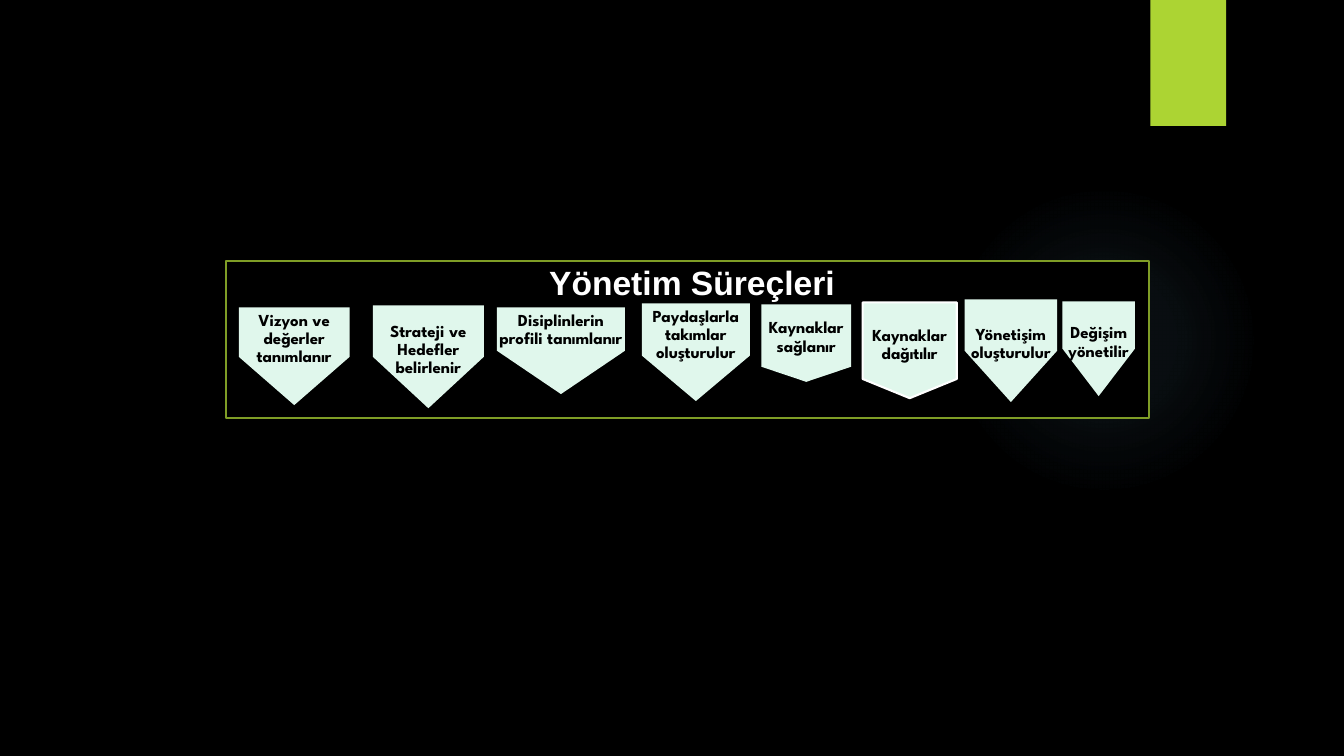
from lxml import etree
from pptx import Presentation
from pptx.dml.color import RGBColor
from pptx.enum.shapes import MSO_SHAPE
from pptx.enum.text import MSO_ANCHOR, PP_ALIGN
from pptx.oxml.ns import qn
from pptx.util import Pt

RECT, OVAL = MSO_SHAPE.RECTANGLE, MSO_SHAPE.OVAL
TOP, MID = MSO_ANCHOR.TOP, MSO_ANCHOR.MIDDLE
CENTER = PP_ALIGN.CENTER
BLACK = RGBColor(0x00, 0x00, 0x00)
WHITE = RGBColor(0xFF, 0xFF, 0xFF)
LIME = RGBColor(0xAC, 0xD4, 0x33)
OLIVE = RGBColor(0x7F, 0x9D, 0x26)
MINT = RGBColor(0xE0, 0xF7, 0xEC)
SKY = RGBColor(0x7A, 0xC4, 0xF0)

TITLE = "Yönetim Süreçleri"
# text, left, top, width, side, height, anchor, inset above, inset below, edge
STEPS = [
    ("Vizyon ve değerler tanımlanır", 170.6, 219.6, 79.2, 35.3, 69.8, TOP, 3, 25, None),
    ("Strateji ve Hedefler belirlenir", 266.4, 218.2, 79.2, 36.7, 73.4, MID, 15, 25, None),
    ("Disiplinlerin profili tanımlanır", 355, 219.6, 91.4, 31, 61.9, TOP, 3, 32, None),
    ("Paydaşlarla takımlar oluşturulur", 458.6, 216.7, 77, 37.4, 69.8, TOP, 3, 23, None),
    ("Kaynaklar sağlanır", 543.8, 217.4, 64.2, 44.6, 55.4, MID, 3, 11, None),
    ("Kaynaklar dağıtılır", 616.2, 216, 67.2, 54.7, 68.4, MID, 5, 12, WHITE),
    ("Yönetişim oluşturulur", 689, 213.8, 66.2, 36.7, 73.4, MID, 3, 12, None),
    ("Değişim yönetilir", 758.9, 215.3, 51.8, 33.8, 67.7, MID, 3, 12, None),
]
GLOW = [(0, 7), (36, 6), (69, 0)]
LABEL = {"name": "League Spartan", "size": Pt(12), "bold": True}
HEAD = {"name": "Arial", "size": Pt(24), "bold": True}


def apply(item, form):
    for key, val in form.items():
        setattr(item, key, val)


def paint(shape, fill, edge=None):
    shape.shadow.inherit = False
    shape.fill.solid()
    shape.fill.fore_color.rgb = fill
    if edge is None:
        shape.line.fill.background()
    else:
        shape.line.color.rgb = edge
        shape.line.width = Pt(1.5)


def write(frame, text, form, color):
    par = frame.paragraphs[0]
    run = par.add_run()
    run.text = text
    apply(run.font, form)
    run.font.color.rgb = color
    return par


def add_box(kind, left, top, width, height, fill, edge=None):
    box = slide.shapes.add_shape(kind, Pt(left), Pt(top), Pt(width), Pt(height))
    paint(box, fill, edge)
    return box


def add_glow():
    glow = add_box(OVAL, 677.5, 131.8, 221.8, 221.8, SKY)
    old = glow.fill._xPr.find(qn("a:solidFill"))
    grad = etree.Element(qn("a:gradFill"), rotWithShape="1")
    stops = etree.SubElement(grad, qn("a:gsLst"))
    for pos, alpha in GLOW:
        stop = etree.SubElement(stops, qn("a:gs"), pos=str(pos * 1000))
        tint = etree.SubElement(stop, qn("a:srgbClr"), val=str(SKY))
        etree.SubElement(tint, qn("a:alpha"), val=str(alpha * 1000))
    ring = etree.SubElement(grad, qn("a:path"), path="circle")
    etree.SubElement(ring, qn("a:fillToRect"), l="50000", t="50000", r="50000", b="50000")
    old.getparent().replace(old, grad)


def add_step(text, left, top, width, side, height, anchor, above, below, edge):
    right, low = left + width, top + side
    points = [(right, top), (right, low), (left + width / 2, top + height), (left, low)]
    pen = slide.shapes.build_freeform(Pt(left), Pt(top))
    pen.add_line_segments([(Pt(x), Pt(y)) for x, y in points], close=True)
    step = pen.convert_to_shape()
    paint(step, MINT, edge)
    frame = step.text_frame
    apply(frame, {
        "word_wrap": True, "vertical_anchor": anchor,
        "margin_left": Pt(0.7), "margin_right": Pt(0.7),
        "margin_top": Pt(above), "margin_bottom": Pt(below),
    })
    par = write(frame, text, LABEL, BLACK)
    apply(par, {"alignment": CENTER, "line_spacing": 0.9})


deck = Presentation()
apply(deck, {"slide_width": Pt(960), "slide_height": Pt(540)})
slide = deck.slides.add_slide(deck.slide_layouts[6])
back = slide.background.fill
back.solid()
back.fore_color.rgb = BLACK

add_glow()
add_box(RECT, 821.8, 0, 54, 90, LIME)
add_box(RECT, 161.3, 186.5, 659.5, 112.3, BLACK, OLIVE)
for step in STEPS:
    add_step(*step)
title = slide.shapes.add_textbox(Pt(385.2), Pt(183.6), Pt(220.3), Pt(36))
title.text_frame.word_wrap = False
write(title.text_frame, TITLE, HEAD, WHITE)

deck.save("out.pptx")
